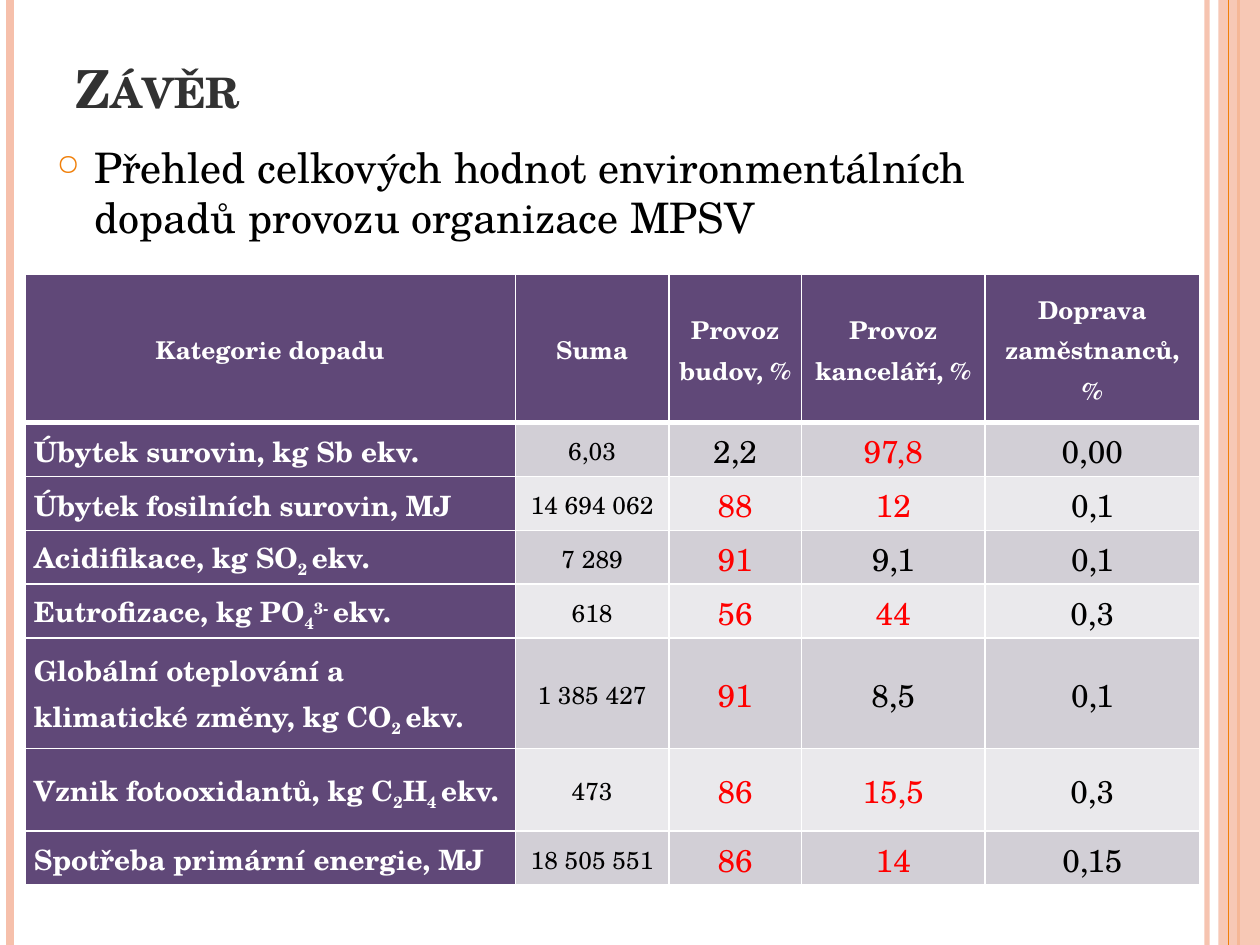
from lxml import etree
from pptx import Presentation
from pptx import util as u
from pptx.dml.color import RGBColor
from pptx.enum import shapes, text
from pptx.oxml.ns import qn

FONT = "TeX Gyre Schola"
COLORS = {
    "peach": "F6C0AB", "orange": "F07F09", "title": "323232", "black": "000000",
    "white": "FFFFFF", "red": "FF0000", "purple": "604878",
    "dark_band": "D2CFD6", "light_band": "EAE9EC",
}
SLIDE_WIDTH, SLIDE_HEIGHT = u.Inches(10), u.Inches(7.5)

# Boxes as percentages of the slide: left, top, width, height
TITLE_BOX = (5, 4, 81.7, 9.2)
BODY_BOX = (3.5, 14.27, 83.1, 80.13)
TABLE_BOX = (2, 29.07, 93.2, 64.6)

# Relative column widths and row heights
COLUMNS = [3.89, 1.22, 1.05, 1.46, 1.7]
ROWS = [1.18, 0.43, 0.43, 0.43, 0.43, 0.88, 0.66, 0.43]
VALUE_SIZES = [14, 18, 18, 18]
SUB, SUPER = -25, 30

HEADERS = ["Kategorie dopadu", "Suma", "Provoz budov, %", "Provoz kanceláří, %",
           "Doprava zaměstnanců, %"]
# Category runs (text, baseline shift), values, columns shown in red
IMPACTS = [
    ([("Úbytek surovin, kg Sb ekv.", 0)], ["6,03", "2,2", "97,8", "0,00"], {3}),
    ([("Úbytek fosilních surovin, MJ", 0)], ["14 694 062", "88", "12", "0,1"], {2, 3}),
    ([("Acidifikace, kg SO", 0), ("2 ", SUB), ("ekv.", 0)],
     ["7 289", "91", "9,1", "0,1"], {2}),
    ([("Eutrofizace, kg PO", 0), ("4", SUB), ("3- ", SUPER), ("ekv.", 0)],
     ["618", "56", "44", "0,3"], {2, 3}),
    ([("Globální oteplování a klimatické změny, kg CO", 0), ("2 ", SUB), ("ekv.", 0)],
     ["1 385 427", "91", "8,5", "0,1"], {2}),
    ([("Vznik fotooxidantů, kg C", 0), ("2", SUB), ("H", 0), ("4 ", SUB), ("ekv.", 0)],
     ["473", "86", "15,5", "0,3"], {2, 3}),
    ([("Spotřeba primární energie, MJ", 0)], ["18 505 551", "86", "14", "0,15"], {2, 3}),
]


def rgb(name):
    return RGBColor.from_string(COLORS[name])


def place(box):
    left, top, width, height = box
    return (int(SLIDE_WIDTH * left / 100), int(SLIDE_HEIGHT * top / 100),
            int(SLIDE_WIDTH * width / 100), int(SLIDE_HEIGHT * height / 100))


def set_opacity(shape, percent):
    color = next(shape._element.spPr.iter(qn("a:srgbClr")))
    etree.SubElement(color, qn("a:alpha"), val=str(percent * 1000))


def style_run(run, size, color, bold=False, baseline=0):
    run.font.name = FONT
    run.font.size = u.Pt(size)
    run.font.bold = bold
    run.font.color.rgb = rgb(color)
    if baseline:
        run.font._element.set("baseline", str(baseline * 1000))


def add_stripe(slide, x, color, width, opacity=100):
    left = int(SLIDE_WIDTH * x / 100)
    line = slide.shapes.add_connector(
        shapes.MSO_CONNECTOR.STRAIGHT, left, 0, left, SLIDE_HEIGHT)
    line.line.color.rgb = rgb(color)
    line.line.width = u.Pt(width)
    if opacity < 100:
        set_opacity(line, opacity)
    etree.SubElement(line._element.spPr, qn("a:effectLst"))


def add_side_bands(slide):
    add_stripe(slide, 95.8, "peach", 3, 93)
    add_stripe(slide, 0.8, "peach", 4.5)
    add_stripe(slide, 98.3, "orange", 1.5)
    band = slide.shapes.add_shape(
        shapes.MSO_SHAPE.RECTANGLE, *place((96.7, 0, 3.3, 100)))
    band.shadow.inherit = False
    band.fill.solid()
    band.fill.fore_color.rgb = rgb("peach")
    band.line.fill.background()
    set_opacity(band, 87)
    add_stripe(slide, 97.5, "orange", 0.75)


def add_text(slide, box, content, anchor, size, color, bold=False):
    text_frame = slide.shapes.add_textbox(*place(box)).text_frame
    text_frame.word_wrap = True
    text_frame.vertical_anchor = anchor
    text_frame.text = content
    paragraph = text_frame.paragraphs[0]
    style_run(paragraph.runs[0], size, color, bold)
    return paragraph


def add_title(slide, box):
    paragraph = add_text(slide, box, "Závěr", text.MSO_ANCHOR.BOTTOM, 30, "title", True)
    paragraph.runs[0].font._element.set("cap", "small")


def add_body(slide, box):
    paragraph = add_text(
        slide, box,
        "Přehled celkových hodnot environmentálních dopadů provozu organizace MPSV",
        text.MSO_ANCHOR.TOP, 24, "black")
    paragraph.space_before = u.Pt(6)
    # Hanging bullet
    properties = paragraph._p.get_or_add_pPr()
    properties.set("marL", str(u.Inches(0.3)))
    properties.set("indent", str(-u.Inches(0.3)))
    bullet_color = etree.SubElement(properties, qn("a:buClr"))
    etree.SubElement(bullet_color, qn("a:srgbClr"), val=COLORS["orange"])
    etree.SubElement(properties, qn("a:buSzPct"), val="70000")
    etree.SubElement(properties, qn("a:buChar"), char="○")


def set_borders(cell, top, bottom):
    properties = cell._tc.get_or_add_tcPr()
    widths = {"lnL": 1, "lnR": 1, "lnT": top, "lnB": bottom}
    for index, (side, width) in enumerate(widths.items()):
        line = etree.Element(qn(f"a:{side}"), w=str(u.Pt(width)))
        fill = etree.SubElement(line, qn("a:solidFill"))
        etree.SubElement(fill, qn("a:srgbClr"), val=COLORS["white"])
        properties.insert(index, line)


def fill_cell(cell, runs, fill, size, color, bold, centred):
    cell.fill.solid()
    cell.fill.fore_color.rgb = rgb(fill)
    cell.vertical_anchor = text.MSO_ANCHOR.MIDDLE
    cell.margin_left = cell.margin_right = u.Inches(0.07)
    cell.margin_top = cell.margin_bottom = 0
    paragraph = cell.text_frame.paragraphs[0]
    paragraph.line_spacing = 1.07
    paragraph.alignment = text.PP_ALIGN.CENTER if centred else text.PP_ALIGN.LEFT
    for content, baseline in runs:
        run = paragraph.add_run()
        run.text = content
        style_run(run, size, color, bold, baseline)


def add_impact_table(slide, box):
    left, top, width, height = place(box)
    table = slide.shapes.add_table(
        len(ROWS), len(COLUMNS), left, top, width, height).table
    for column, share in zip(table.columns, COLUMNS):
        column.width = int(width * share / sum(COLUMNS))
    for row, share in zip(table.rows, ROWS):
        row.height = int(height * share / sum(ROWS))

    # Header row
    for index, header in enumerate(HEADERS):
        cell = table.cell(0, index)
        fill_cell(cell, [(header, 0)], "purple", 14, "white", True, True)
        set_borders(cell, 1, 3)

    # Impact rows
    for row, (category, values, red_columns) in enumerate(IMPACTS, 1):
        band = "dark_band" if row % 2 else "light_band"
        fill_cell(table.cell(row, 0), category, "purple", 16, "white", True, False)
        for column, (value, size) in enumerate(zip(values, VALUE_SIZES), 1):
            color = "red" if column in red_columns else "black"
            fill_cell(table.cell(row, column), [(value, 0)], band, size, color, False, True)
        for column in range(len(COLUMNS)):
            set_borders(table.cell(row, column), 3 if row == 1 else 1, 1)


def main():
    presentation = Presentation()
    presentation.slide_width, presentation.slide_height = SLIDE_WIDTH, SLIDE_HEIGHT
    slide = presentation.slides.add_slide(presentation.slide_layouts[6])
    add_side_bands(slide)
    add_title(slide, TITLE_BOX)
    add_body(slide, BODY_BOX)
    add_impact_table(slide, TABLE_BOX)
    presentation.save("out.pptx")


if __name__ == "__main__":
    main()
